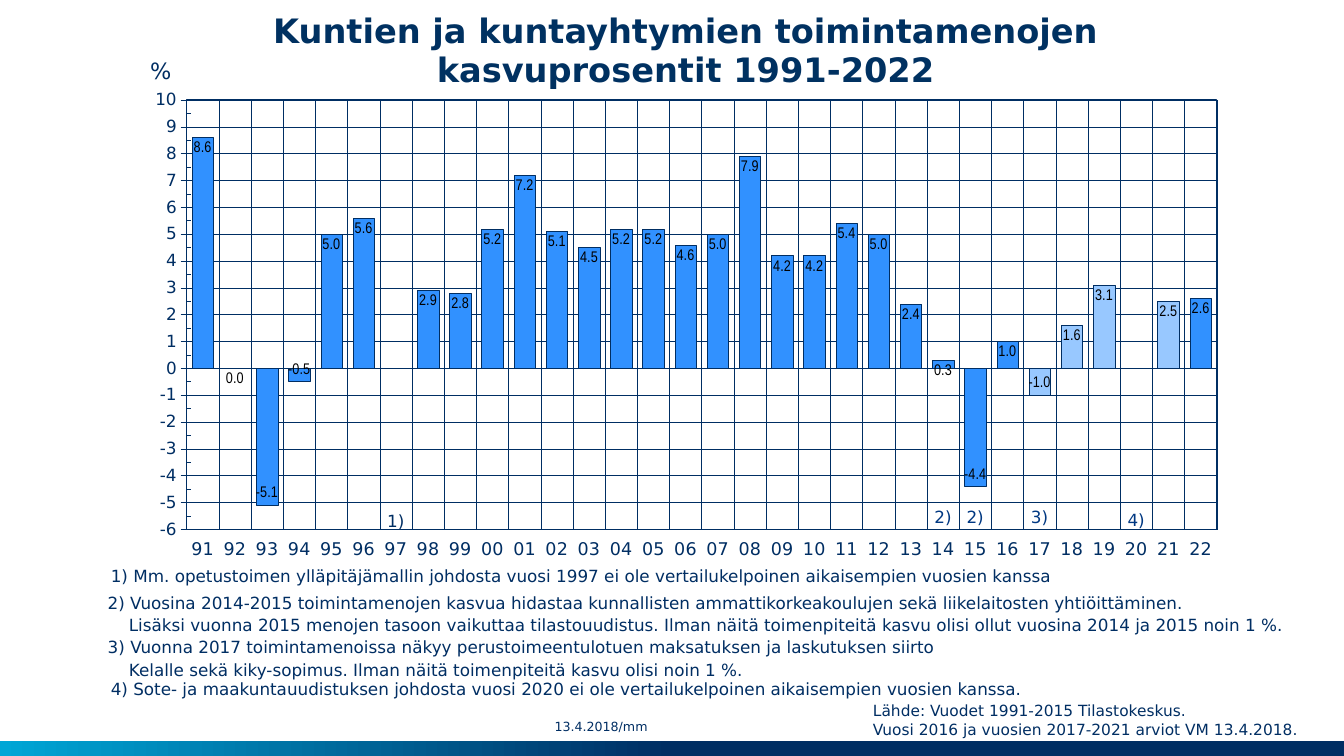
from pptx import Presentation
from pptx.chart.data import CategoryChartData
from pptx.dml.color import RGBColor
from pptx.enum.chart import XL_CHART_TYPE, XL_LABEL_POSITION, XL_TICK_LABEL_POSITION, XL_TICK_MARK
from pptx.enum.dml import MSO_LINE
from pptx.enum.shapes import MSO_SHAPE
from pptx.enum.text import MSO_ANCHOR, MSO_AUTO_SIZE, PP_ALIGN
from pptx.oxml import parse_xml
from pptx.oxml.ns import nsdecls
from pptx.util import Inches, Pt

STACKED = XL_CHART_TYPE.COLUMN_STACKED
INSIDE_END = XL_LABEL_POSITION.INSIDE_END
LOW = XL_TICK_LABEL_POSITION.LOW
TICK_OUT, TICK_IN = XL_TICK_MARK.OUTSIDE, XL_TICK_MARK.INSIDE
DOTTED = MSO_LINE.ROUND_DOT
RECTANGLE = MSO_SHAPE.RECTANGLE
TOP, MIDDLE, BOTTOM = MSO_ANCHOR.TOP, MSO_ANCHOR.MIDDLE, MSO_ANCHOR.BOTTOM
CENTER = PP_ALIGN.CENTER
NO_FIT = MSO_AUTO_SIZE.NONE

FONT = "DejaVu Sans"
COLORS = {
    "navy": "002E63", "title": "003161", "marker": "003882", "cyan": "00A6D6",
    "bar": "3191FF", "estimate": "98C8FF", "label": "000000",
}
WIDTH, HEIGHT = 13.33, 7.5
CHART_BOX = (1.39, 0.89, 10.71, 4.84)
PLOT = {"x": 0.043, "y": 0.021, "w": 0.954, "h": 0.88}

FIRST_YEAR, LAST_YEAR = 1991, 2022
GROWTH = [
    8.6, 0, -5.1, -0.5, 5, 5.6, None, 2.9, 2.8, 5.2, 7.2, 5.1, 4.5, 5.2, 5.2, 4.6,
    5, 7.9, 4.2, 4.2, 5.4, 5, 2.4, 0.3, -4.4, 1, -1, 1.6, 3.1, None, 2.5, 2.6,
]
ESTIMATE_YEARS = range(2017, 2022)
MARKERS = [
    (1997, "1)", 5.02, "navy"), (2014, "2)", 4.98, "marker"), (2015, "2)", 4.98, "marker"),
    (2017, "3)", 4.98, "marker"), (2020, "4)", 5.01, "marker"),
]
TITLE = ["Kuntien ja kuntayhtymien toimintamenojen", "kasvuprosentit 1991-2022"]
NOTES = [
    ((1, 5.56, 9.69, 0.3), TOP, 1, [
        "1) Mm. opetustoimen ylläpitäjämallin johdosta vuosi 1997 ei ole vertailukelpoinen aikaisempien vuosien kanssa"]),
    ((0.97, 5.84, 12.13, 0.51), BOTTOM, 1.1, [
        "2) Vuosina 2014-2015 toimintamenojen kasvua hidastaa kunnallisten ammattikorkeakoulujen sekä liikelaitosten yhtiöittäminen.",
        "Lisäksi vuonna 2015 menojen tasoon vaikuttaa tilastouudistus. Ilman näitä toimenpiteitä kasvu olisi ollut vuosina 2014 ja 2015 noin 1 %."]),
    ((0.97, 6.34, 9.92, 0.45), BOTTOM, 1.1, [
        "3) Vuonna 2017 toimintamenoissa näkyy perustoimeentulotuen maksatuksen ja laskutuksen siirto",
        "Kelalle sekä kiky-sopimus. Ilman näitä toimenpiteitä kasvu olisi noin 1 %."]),
    ((1, 6.68, 9.69, 0.3), TOP, 1, [
        "4) Sote- ja maakuntauudistuksen johdosta vuosi 2020 ei ole vertailukelpoinen aikaisempien vuosien kanssa."]),
]
SOURCE = ["Lähde: Vuodet 1991-2015 Tilastokeskus.",
          "Vuosi 2016 ja vuosien 2017-2021 arviot VM 13.4.2018."]


def rgb(name):
    """Return the named colour."""
    return RGBColor.from_string(COLORS[name])


def style_font(font, size, color="navy", face=FONT, bold=False):
    """Set face, size, weight and colour of a font."""
    font.name, font.size, font.bold = face, Pt(size), bold
    font.color.rgb = rgb(color)


def style_line(line, dash=None):
    """Draw a hairline in navy."""
    line.color.rgb = rgb("navy")
    line.width = Pt(0.25)
    if dash is not None:
        line.dash_style = dash


def clear_margins(frame):
    """Remove the insets of a text frame."""
    frame.margin_left = frame.margin_right = frame.margin_top = frame.margin_bottom = 0


def add_text(page, box, lines, size, color="navy", anchor=TOP, spacing=1, wrap=True, hanging=0):
    """Add a text box whose lines after the first are indented by hanging."""
    frame = page.shapes.add_textbox(*map(Inches, box)).text_frame
    frame.word_wrap, frame.vertical_anchor = wrap, anchor
    frame.text = "\n".join(lines)
    for number, para in enumerate(frame.paragraphs):
        para.line_spacing = spacing
        if number and hanging:
            para._p.get_or_add_pPr().set("marL", str(Inches(hanging)))
        style_font(para.font, size, color)
    return frame


def add_title(page, box):
    """Place the two-line title in its placeholder."""
    title = page.shapes.title
    title.left, title.top, title.width, title.height = map(Inches, box)
    frame = title.text_frame
    clear_margins(frame)
    frame.auto_size, frame.vertical_anchor = NO_FIT, TOP
    frame.text = "\n".join(TITLE)
    for para in frame.paragraphs:
        para.alignment, para.line_spacing = CENTER, 0.95
        style_font(para.font, 24, "title", bold=True)


def add_footer_band(page, box):
    """Draw the gradient band along the lower edge."""
    band = page.shapes.add_shape(RECTANGLE, *map(Inches, box))
    band.shadow.inherit = False
    band.line.fill.background()
    band.fill.gradient()
    band.fill.gradient_angle = 180
    stops = ((0.5, "navy"), (1, "cyan"))
    for stop, (position, color) in zip(band.fill.gradient_stops, stops):
        stop.position, stop.color.rgb = position, rgb(color)


def style_axis(axis, size):
    """Format an axis with its gridlines and labels."""
    axis.has_major_gridlines = True
    style_line(axis.major_gridlines.format.line, DOTTED)
    style_line(axis.format.line)
    axis.major_tick_mark = TICK_OUT
    axis.tick_label_position = LOW
    style_font(axis.tick_labels.font, size)


def fix_plot_area(chart):
    """Pin the inner plot area to its share of the chart and outline it."""
    area = chart._chartSpace.chart.plotArea
    for layout in area.findall("{*}layout"):
        area.remove(layout)
    modes = "".join(f'<c:{axis}Mode val="edge"/>' for axis in "xy")
    shares = "".join(f'<c:{side} val="{share}"/>' for side, share in PLOT.items())
    area.insert(0, parse_xml(
        f'<c:layout {nsdecls("c")}><c:manualLayout><c:layoutTarget val="inner"/>'
        f'{modes}{shares}</c:manualLayout></c:layout>'))
    area.append(parse_xml(
        f'<c:spPr {nsdecls("c", "a")}><a:noFill/><a:ln w="{Pt(1)}"><a:solidFill>'
        f'<a:srgbClr val="{COLORS["navy"]}"/></a:solidFill></a:ln></c:spPr>'))


def add_growth_chart(page, box):
    """Add the column chart of yearly growth."""
    data = CategoryChartData(number_format="0.0")
    data.categories = [f"{year % 100:02d}" for year in range(FIRST_YEAR, LAST_YEAR + 1)]
    data.add_series("Kasvu", GROWTH)
    chart = page.shapes.add_chart(STACKED, *map(Inches, box), data).chart
    chart.has_title = chart.has_legend = False
    style_font(chart.font, 12)
    style_axis(chart.category_axis, 12.5)
    scale = chart.value_axis
    style_axis(scale, 12)
    scale.minimum_scale, scale.maximum_scale, scale.major_unit = -6, 10, 1
    scale.minor_unit, scale.minor_tick_mark = 0.5, TICK_IN
    scale.tick_labels.number_format, scale.tick_labels.number_format_is_linked = "0", False
    plot = chart.plots[0]
    plot.gap_width, plot.overlap, plot.vary_by_categories = 50, 100, False
    series = plot.series[0]
    series.invert_if_negative = False
    estimates = [series.points[year - FIRST_YEAR] for year in ESTIMATE_YEARS]
    for part, color in [(series, "bar")] + [(point, "estimate") for point in estimates]:
        part.format.fill.solid()
        part.format.fill.fore_color.rgb = rgb(color)
        style_line(part.format.line)
    labels = series.data_labels
    labels.show_value, labels.position = True, INSIDE_END
    labels.number_format, labels.number_format_is_linked = "0.0", False
    style_font(labels.font, 11, "label", "Arial Narrow")
    fix_plot_area(chart)


def add_markers(page, box):
    """Put the note numbers over the columns of their years."""
    left, _, width, _ = box
    column = width * PLOT["w"] / len(GROWTH)
    size = 0.39
    for year, mark, top, color in MARKERS:
        center = left + width * PLOT["x"] + (year - FIRST_YEAR + 0.5) * column
        add_text(page, (center - size / 2 + 0.01, top, size, 0.3), [mark], 12, color, wrap=False)


def add_notes(page):
    """Add the notes, the date and the source below the chart."""
    for box, anchor, spacing, lines in NOTES:
        add_text(page, box, lines, 12, anchor=anchor, spacing=spacing, hanging=0.21)
    clear_margins(add_text(page, (5.5, 7.06, 1.25, 0.29), ["13.4.2018/mm"], 9, anchor=MIDDLE))
    add_text(page, (8.56, 6.91, 4.53, 0.47), SOURCE, 11)


def main():
    """Build the slide and save the deck."""
    deck = Presentation()
    deck.slide_width, deck.slide_height = Inches(WIDTH), Inches(HEIGHT)
    page = deck.slides.add_slide(deck.slide_layouts[5])
    add_footer_band(page, (0, HEIGHT - 0.15, WIDTH, 0.15))
    add_title(page, (2.34, 0.13, 8.92, 0.77))
    add_growth_chart(page, CHART_BOX)
    add_text(page, (1.39, 0.52, 0.44, 0.37), ["%"], 16, wrap=False)
    add_markers(page, CHART_BOX)
    add_notes(page)
    deck.save("out.pptx")


if __name__ == "__main__":
    main()
